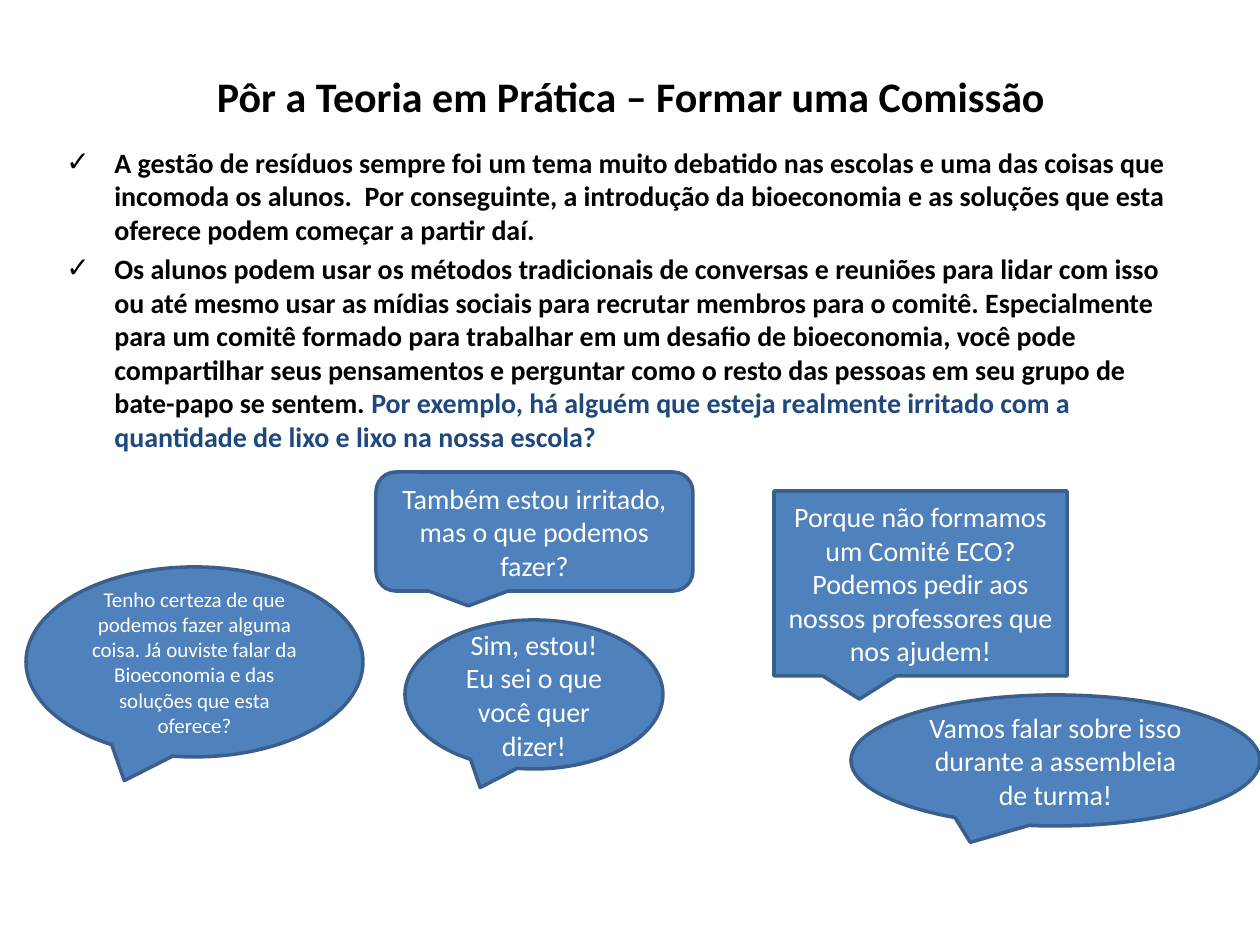
from dataclasses import dataclass
from lxml import etree
from pptx import Presentation
from pptx.dml.color import RGBColor
from pptx.enum.shapes import MSO_SHAPE
from pptx.enum.text import MSO_ANCHOR, PP_ALIGN
from pptx.oxml.ns import qn
from pptx.util import Emu, Pt

OVAL = MSO_SHAPE.OVAL_CALLOUT
ROUND = MSO_SHAPE.ROUNDED_RECTANGULAR_CALLOUT
RECT = MSO_SHAPE.RECTANGULAR_CALLOUT
MID, TOP = MSO_ANCHOR.MIDDLE, MSO_ANCHOR.TOP
LEFT, CENTER = PP_ALIGN.LEFT, PP_ALIGN.CENTER

BLACK = RGBColor(0x00, 0x00, 0x00)
WHITE = RGBColor(0xFF, 0xFF, 0xFF)
NAVY = RGBColor(0x1F, 0x49, 0x7D)
BLUE = RGBColor(0x4F, 0x81, 0xBD)
EDGE = RGBColor(0x3A, 0x5F, 0x8C)
FONT = "Calibri"


def px(n: int) -> Emu:
    """Turn pixels, 126 to the inch, into EMU."""
    return Emu(round(n * 914400 / 126))


@dataclass
class Box:
    x: int
    y: int
    w: int
    h: int

    def emu(self) -> list[Emu]:
        return [px(n) for n in (self.x, self.y, self.w, self.h)]


@dataclass
class Bubble:
    kind: MSO_SHAPE
    box: Box
    text: str
    size: int = 16


def add_bullet(para, indent: int) -> None:
    props = para._p.get_or_add_pPr()
    props.set("marL", str(px(indent)))
    props.set("indent", str(-px(indent)))
    etree.SubElement(props, qn("a:buFont")).set("typeface", "Arial")
    etree.SubElement(props, qn("a:buChar")).set("char", "✓")


def write(shape, paras: list, *, size: int, color=BLACK, bold=False,
          align=CENTER, anchor=MID, bullet=False, gap=0.0) -> None:
    """Fill a shape with paragraphs, each a list of (text, color or None)."""
    frame = shape.text_frame
    frame.word_wrap = True
    frame.vertical_anchor = anchor
    for i, runs in enumerate(paras):
        para = frame.add_paragraph() if i else frame.paragraphs[0]
        if bullet:
            add_bullet(para, 48)
        para.alignment = align
        para.space_before = Pt(gap if i else 0)
        for text, tint in runs:
            run = para.add_run()
            run.text = text
            font = run.font
            font.name, font.size, font.bold = FONT, Pt(size), bold
            font.color.rgb = tint or color


def draw(slide, item: Bubble) -> None:
    shape = slide.shapes.add_shape(item.kind, *item.box.emu())
    shape.shadow.inherit = False
    shape.fill.solid()
    shape.fill.fore_color.rgb = BLUE
    shape.line.color.rgb = EDGE
    shape.line.width = Pt(2)
    write(shape, [[(item.text, None)]], size=item.size, color=WHITE)


TITLE = "Pôr a Teoria em Prática – Formar uma Comissão"
POINTS = [
    [("A gestão de resíduos sempre foi um tema muito debatido nas escolas e "
      "uma das coisas que incomoda os alunos.  Por conseguinte, a introdução "
      "da bioeconomia e as soluções que esta oferece podem começar a partir "
      "daí.", None)],
    [("Os alunos podem usar os métodos tradicionais de conversas e reuniões "
      "para lidar com isso ou até mesmo usar as mídias sociais para recrutar "
      "membros para o comitê. Especialmente para um comitê formado para "
      "trabalhar em um desafio de bioeconomia, você pode compartilhar seus "
      "pensamentos e perguntar como o resto das pessoas em seu grupo de "
      "bate-papo se sentem.", None),
     (" Por exemplo, há alguém que esteja realmente irritado com a quantidade "
      "de lixo e lixo na nossa escola?", NAVY)],
]
BUBBLES = [
    Bubble(OVAL, Box(405, 620, 258, 149),
           "Sim, estou! Eu sei o que você quer dizer!"),
    Bubble(ROUND, Box(376, 472, 317, 119),
           "Também estou irritado, mas o que podemos fazer?"),
    Bubble(OVAL, Box(851, 695, 409, 131),
           "Vamos falar sobre isso durante a assembleia de turma!"),
    Bubble(RECT, Box(774, 491, 293, 185),
           "Porque não formamos um Comité ECO? Podemos pedir aos nossos "
           "professores que nos ajudem!"),
    Bubble(OVAL, Box(26, 567, 337, 190),
           "Tenho certeza de que podemos fazer alguma coisa. Já ouviste falar "
           "da Bioeconomia e das soluções que esta oferece?", 12),
]


def main() -> None:
    deck = Presentation()
    deck.slide_width, deck.slide_height = px(1260), px(945)
    slide = deck.slides.add_slide(deck.slide_layouts[6])

    # Title and bullet points
    head = slide.shapes.add_textbox(*Box(64, 17, 1134, 158).emu())
    write(head, [[(TITLE, None)]], size=24, bold=True)
    body = slide.shapes.add_textbox(*Box(54, 139, 1134, 745).emu())
    write(body, POINTS, size=16, bold=True, align=LEFT, anchor=TOP,
          bullet=True, gap=3.2)

    # Speech bubbles
    for item in BUBBLES:
        draw(slide, item)

    deck.save("out.pptx")


if __name__ == "__main__":
    main()
